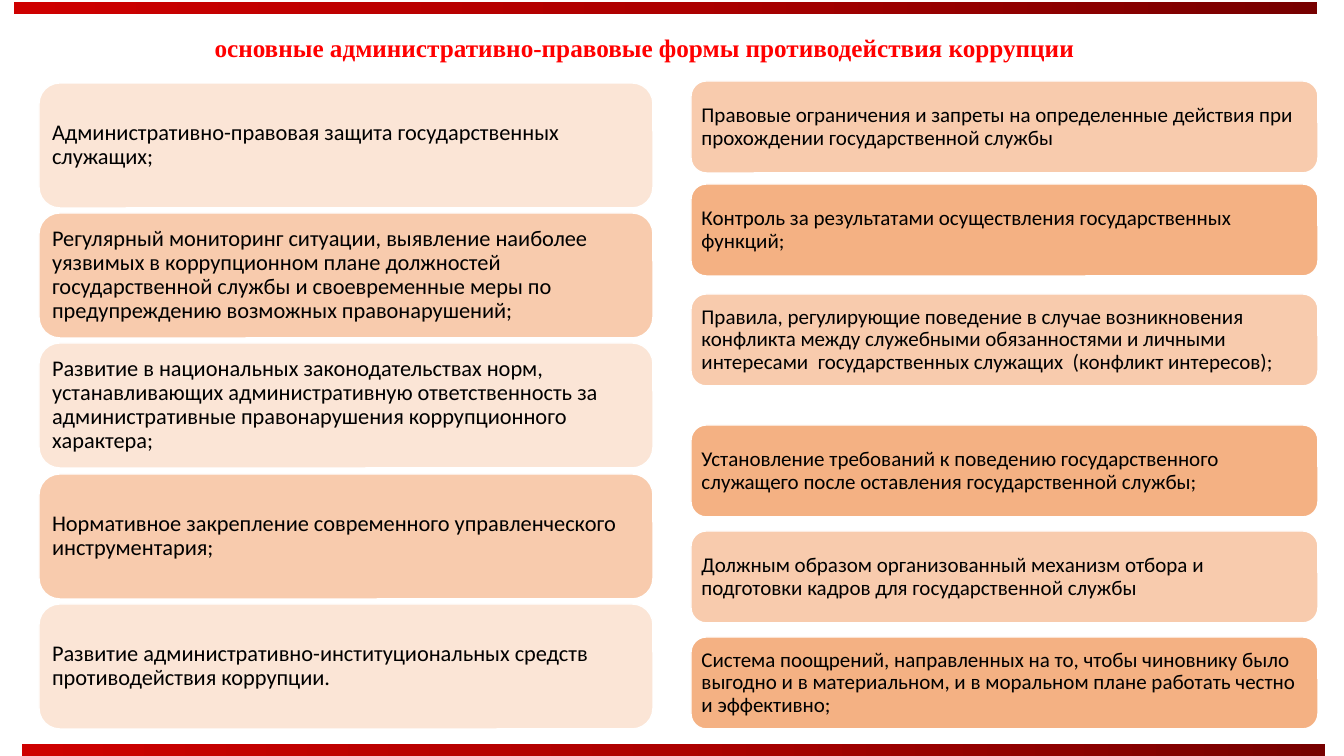
import copy
import pptx
import pptx.util
import pptx.dml.color
import pptx.enum.shapes
import pptx.enum.text

# Content
TITLE = "основные административно-правовые формы противодействия коррупции"
LEFT = [
    "Административно-правовая защита государственных служащих;",
    "Регулярный мониторинг ситуации, выявление наиболее уязвимых в коррупционном плане "
    "должностей государственной службы и своевременные меры по предупреждению "
    "возможных правонарушений;",
    "Развитие в национальных законодательствах норм, устанавливающих административную "
    "ответственность за административные правонарушения коррупционного характера;",
    "Нормативное закрепление современного управленческого инструментария;",
    "Развитие административно-институциональных средств противодействия коррупции.",
]
# Right-hand boxes are unevenly spaced: (top in px, text)
RIGHT = [
    (81, "Правовые ограничения и запреты на определенные действия при прохождении "
         "государственной службы"),
    (184, "Контроль за результатами осуществления государственных функций;"),
    (294, "Правила, регулирующие поведение в случае возникновения конфликта между "
          "служебными обязанностями и личными интересами  государственных служащих  "
          "(конфликт интересов);"),
    (425, "Установление требований к поведению государственного служащего после "
          "оставления государственной службы;"),
    (531, "Должным образом организованный механизм отбора и подготовки кадров для "
          "государственной службы"),
    (637, "Система поощрений, направленных на то, чтобы чиновнику было выгодно и в "
          "материальном, и в моральном плане работать честно и эффективно;"),
]
BARS = [(22, 744), (14, 2)]

# Theme
THEME = {
    "title": ("Times New Roman", 18, "FF0000", True),
    "left": ("Calibri", 16, "000000", False),
    "right": ("Calibri", 15, "000000", False),
    "left fills": ("FBE5D6", "F8CBAD"),
    "right fills": ("F8CBAD", "F4B183"),
    "edge": "FFFFFF",
    "bar": ("CE0000", "AD0000", "770000"),
}
KIND = pptx.enum.shapes.MSO_SHAPE
TEXT = pptx.enum.text


def px(num):
    return pptx.util.Emu(round(num * 914400 / 100.8))


def tint(code):
    return pptx.dml.color.RGBColor.from_string(code)


def write(para, text, style):
    face, size, code, bold = THEME[style]
    run = para.add_run()
    run.text = text
    run.font.name = face
    run.font.size = pptx.util.Pt(size)
    run.font.bold = bold
    run.font.color.rgb = tint(code)


def add_bar(slide, left, top):
    bar = slide.shapes.add_shape(KIND.RECTANGLE, px(left), px(top), px(1303), px(12))
    bar.shadow.inherit = False
    bar.line.fill.background()
    bar.fill.gradient()
    bar.fill.gradient_angle = 0
    # The default gradient has two stops; a third goes between them
    first = bar.fill._fill._gradFill.gsLst[0]
    first.addnext(copy.deepcopy(first))
    for stop, code, spot in zip(bar.fill.gradient_stops, THEME["bar"], (0, 0.5, 1)):
        stop.color.rgb = tint(code)
        stop.position = spot


def add_box(slide, area, pad, text, style, fill):
    box = slide.shapes.add_shape(KIND.ROUNDED_RECTANGLE, *map(px, area))
    box.shadow.inherit = False
    box.fill.solid()
    box.fill.fore_color.rgb = tint(fill)
    box.line.color.rgb = tint(THEME["edge"])
    box.line.width = pptx.util.Pt(1)
    frame = box.text_frame
    frame.word_wrap = True
    frame.vertical_anchor = TEXT.MSO_ANCHOR.MIDDLE
    frame.margin_left = frame.margin_right = px(pad)
    frame.margin_top = frame.margin_bottom = px(pad)
    para = frame.paragraphs[0]
    para.alignment = TEXT.PP_ALIGN.LEFT
    para.line_spacing = 0.9
    write(para, text, style)


def main():
    deck = pptx.Presentation()
    deck.slide_width, deck.slide_height = px(1344), px(756)
    slide = deck.slides.add_slide(deck.slide_layouts[5])

    # Bars along the top and bottom edges
    for left, top in BARS:
        add_bar(slide, left, top)

    # Left column: equal steps
    for i, text in enumerate(LEFT):
        area = (39, 83 + round(130.25 * i), 614, 125)
        add_box(slide, area, 7, text, "left", THEME["left fills"][i % 2])

    # Right column
    for i, (top, text) in enumerate(RIGHT):
        area = (691, top, 627, 92)
        add_box(slide, area, 6, text, "right", THEME["right fills"][i % 2])

    # Title
    title = slide.shapes.title
    title.left, title.top, title.width, title.height = map(px, (178, 27, 933, 82))
    frame = title.text_frame
    frame.word_wrap = True
    frame.vertical_anchor = TEXT.MSO_ANCHOR.TOP
    frame.paragraphs[0].alignment = TEXT.PP_ALIGN.CENTER
    write(frame.paragraphs[0], TITLE, "title")

    deck.save("out.pptx")


if __name__ == "__main__":
    main()
